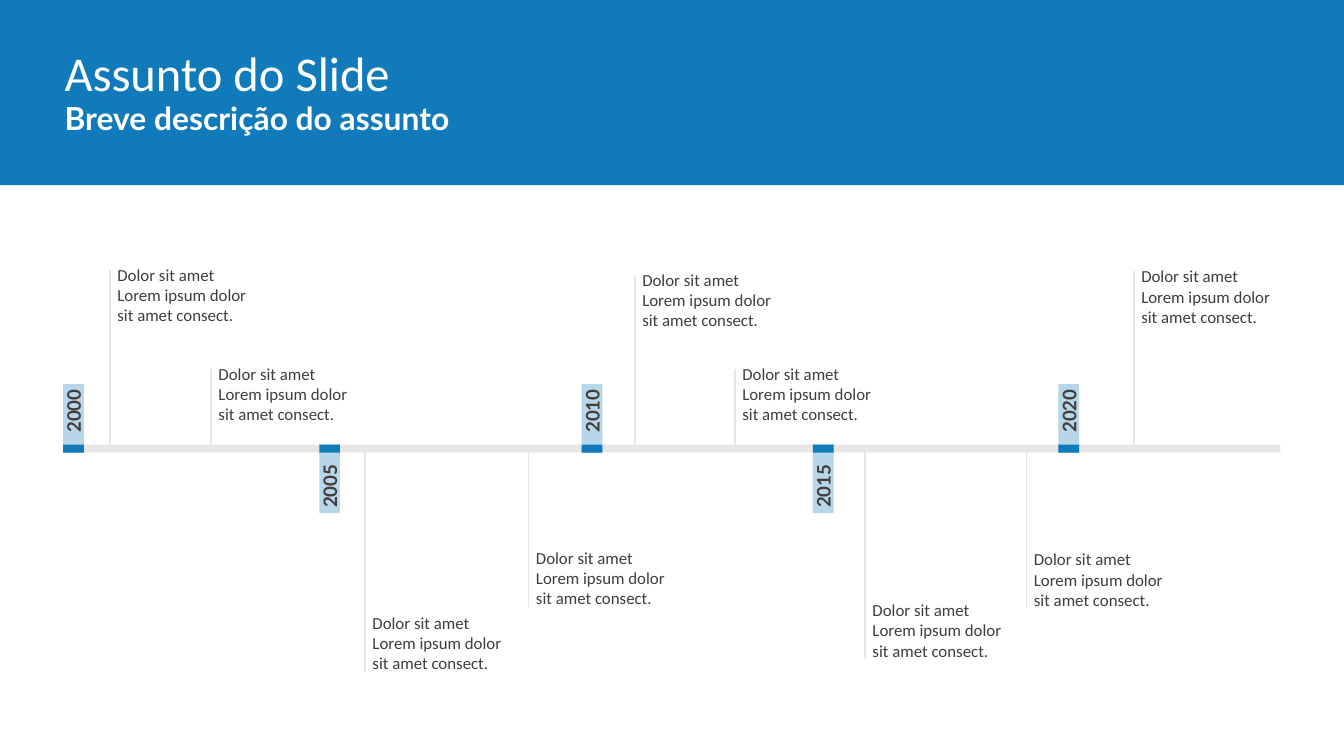
from dataclasses import dataclass

from lxml.etree import SubElement
from pptx import Presentation
from pptx.dml.color import RGBColor
from pptx.enum.shapes import MSO_CONNECTOR as Connector, MSO_SHAPE as Shape
from pptx.enum.text import MSO_ANCHOR as Anchor, PP_ALIGN as Align
from pptx.oxml.ns import qn
from pptx.util import Cm, Pt


@dataclass(frozen=True)
class Theme:
    blue: str = "117ABA"
    pale_blue: str = "B8D6E9"
    grey: str = "E6E6E6"
    ink: str = "403D3B"
    white: str = "FFFFFF"
    body_font: str = "Calibri"
    bold_font: str = "Lato"
    title_size: float = 26
    subtitle_size: float = 17
    year_size: float = 10
    event_size: float = 9
    line_width: float = 0.75


THEME = Theme()
EVENT_LINES = ("Dolor sit amet", "Lorem ipsum dolor sit amet consect.")
YEARS = [("2000", 0.2), ("2005", 5.04), ("2010", 10), ("2015", 14.37), ("2020", 19.01)]
EVENTS = [
    (0.89, -3.38), (2.8, -1.51), (10.81, -3.29), (12.7, -1.51), (20.24, -3.35),
    (15.16, 3.98), (5.71, 4.22), (8.8, 2.99), (18.21, 3.02),
]


def add_block(shapes, left, top, width, height, color):
    shape = shapes.add_shape(Shape.RECTANGLE, Cm(left), Cm(top), Cm(width), Cm(height))
    shape.shadow.inherit = False
    shape.fill.solid()
    shape.fill.fore_color.rgb = RGBColor.from_string(color)
    shape.line.fill.background()
    return shape


def set_margins(frame, left=0, top=0, right=0, bottom=0):
    frame.margin_left, frame.margin_top = Cm(left), Cm(top)
    frame.margin_right, frame.margin_bottom = Cm(right), Cm(bottom)


def add_run(paragraph, text, font, size, color, bold=False):
    run = paragraph.add_run()
    run.text = text
    run.font.name = font
    run.font.size = Pt(size)
    run.font.bold = bold
    run.font.color.rgb = RGBColor.from_string(color)


def add_text(slide, left, top, width, height, lines, font, size, color, bold=False):
    box = slide.shapes.add_textbox(Cm(left), Cm(top), Cm(width), Cm(height))
    frame = box.text_frame
    frame.word_wrap = True
    set_margins(frame)
    paragraph = frame.paragraphs[0]
    for index, line in enumerate(lines):
        if index:
            paragraph.add_line_break()
        add_run(paragraph, line, font, size, color, bold)


def add_header(slide, left, top, width, height):
    add_block(slide.shapes, left, top, width, height, THEME.blue)
    add_text(slide, left + 1.22, top + 0.82, 8.5, 1.06, ["Assunto do Slide"],
             THEME.body_font, THEME.title_size, THEME.white)
    add_text(slide, left + 1.22, top + 1.86, 9.52, 1.16, ["Breve descrição do assunto"],
             THEME.bold_font, THEME.subtitle_size, THEME.white, bold=True)


def add_year(slide, center, axis, year, above):
    length, breadth, thickness = 1.3, 0.39, 0.15
    label_center = axis + (-0.57 if above else 0.57)
    group = slide.shapes.add_group_shape()
    label = add_block(group.shapes, center - length / 2, label_center - breadth / 2,
                      length, breadth, THEME.pale_blue)
    tick = add_block(group.shapes, center - thickness / 2, axis - breadth / 2,
                     thickness, breadth, THEME.blue)
    label.rotation = tick.rotation = 270
    frame = label.text_frame
    frame.vertical_anchor = Anchor.MIDDLE
    set_margins(frame, 0.25 if above else 0.1, 0.13, 0.1, 0.13)
    paragraph = frame.paragraphs[0]
    paragraph.alignment = Align.RIGHT if above else Align.LEFT
    add_run(paragraph, year, THEME.bold_font, THEME.year_size, THEME.ink, bold=True)


def add_event(slide, left, axis, reach):
    end = axis + reach
    line = slide.shapes.add_connector(Connector.STRAIGHT, Cm(left), Cm(axis), Cm(left), Cm(end))
    line.line.color.rgb = RGBColor.from_string(THEME.grey)
    line.line.width = Pt(THEME.line_width)
    SubElement(line.element.spPr, qn("a:effectLst"))
    text_top = end - (0.1 if reach < 0 else 1.12)
    add_text(slide, left + 0.14, text_top, 2.7, 1.14, EVENT_LINES,
             THEME.body_font, THEME.event_size, THEME.ink)


def add_timeline(slide, left, top, width, height):
    axis = top + height / 2
    thickness = 0.15
    add_block(slide.shapes, left, axis - thickness / 2, width, thickness, THEME.grey)
    for index, (year, offset) in enumerate(YEARS):
        add_year(slide, left + offset, axis, year, above=index % 2 == 0)
    for offset, reach in EVENTS:
        add_event(slide, left + offset, axis, reach)


def main():
    presentation = Presentation()
    presentation.slide_width, presentation.slide_height = Cm(25.4), Cm(14.29)
    slide = presentation.slides.add_slide(presentation.slide_layouts[6])
    add_header(slide, 0, 0, 25.4, 3.5)
    add_timeline(slide, 1.19, 4.18, 23.01, 8.6)
    presentation.save("out.pptx")


if __name__ == "__main__":
    main()
